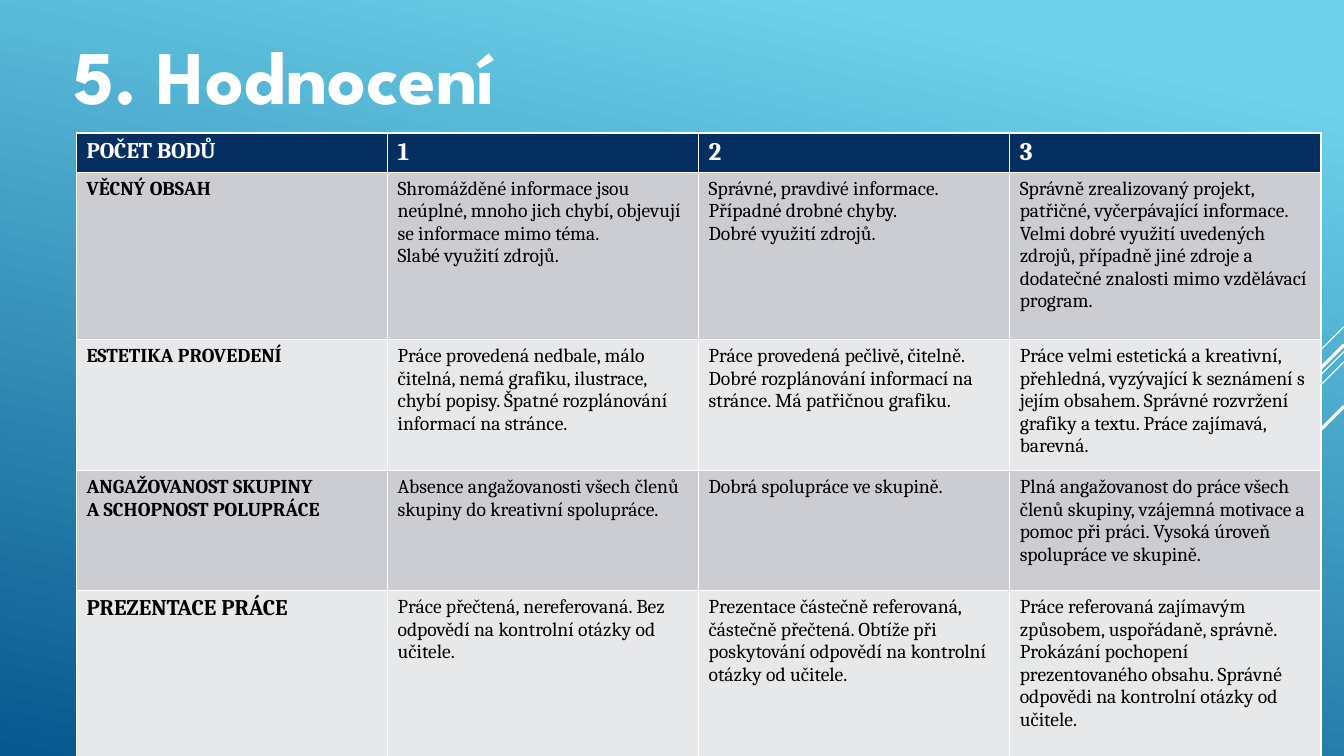
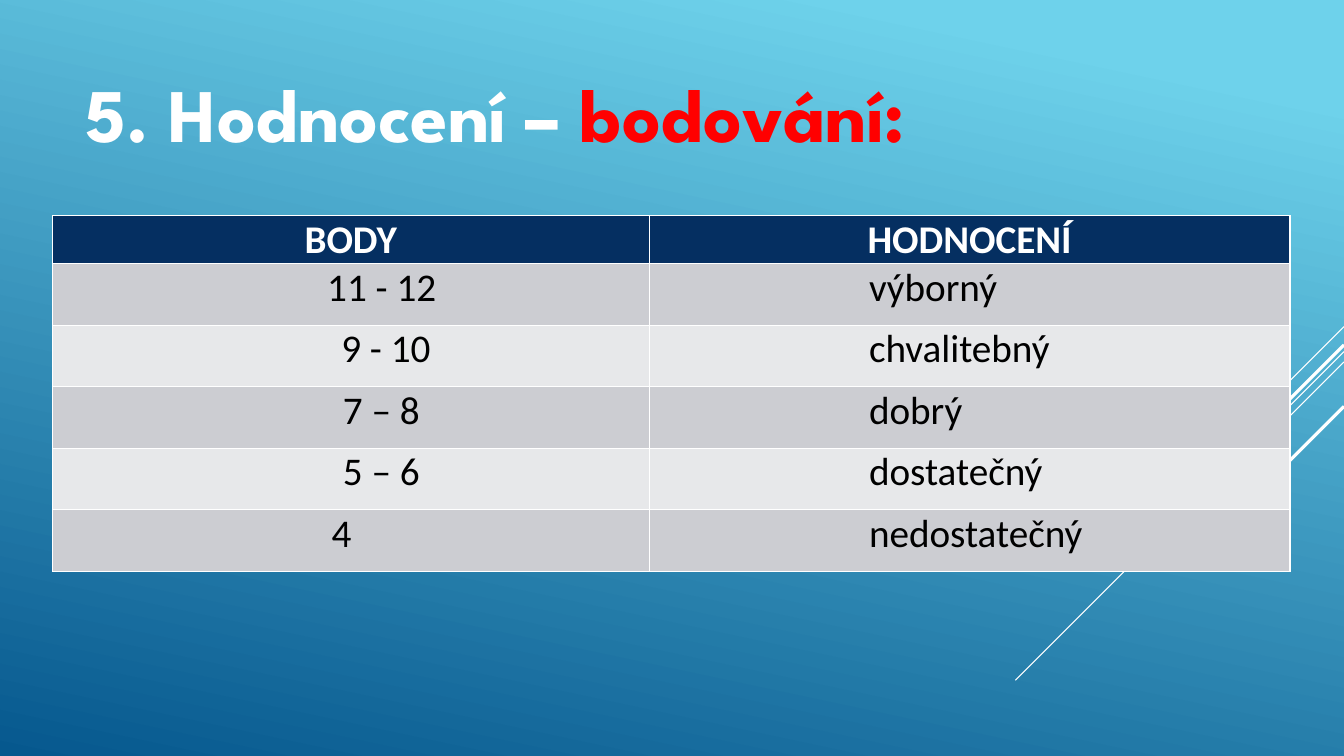
from lxml import etree
from pptx import Presentation
from pptx.dml.color import RGBColor
from pptx.enum import shapes, text
from pptx.oxml import ns
from pptx.util import Cm, Pt

WHITE = RGBColor(0xFF, 0xFF, 0xFF)
BLACK = RGBColor(0x00, 0x00, 0x00)
RED = RGBColor(0xFF, 0x00, 0x00)
NAVY = RGBColor(0x05, 0x2F, 0x61)
BANDS = (RGBColor(0xCC, 0xCD, 0xD2), RGBColor(0xE7, 0xE8, 0xEA))
SKY = ((0.1, RGBColor(0x6E, 0xD2, 0xEB)), (1, RGBColor(0x06, 0x58, 0x8E)))

WIDTH, HEIGHT = 33.87, 19.05
RAYS = [(8.23, 2.54, 0.75), (8.86, 8.28, 0.75), (9.12, 5.27, 0.75),
        (8.69, 4.85, 2.25), (10.24, 3.53, 2.25)]

CRITERIA = [
    ["POČET BODŮ", "1", "2", "3"],
    ["VĚCNÝ OBSAH",
     "Shromážděné informace jsou neúplné, mnoho jich chybí, objevují se "
     "informace mimo téma.\nSlabé využití zdrojů.",
     "Správné, pravdivé informace. Případné drobné chyby.\n"
     "Dobré využití zdrojů.",
     "Správně zrealizovaný projekt, patřičné, vyčerpávající informace. "
     "Velmi dobré využití uvedených zdrojů, případně jiné zdroje a "
     "dodatečné znalosti mimo vzdělávací program."],
    ["ESTETIKA PROVEDENÍ",
     "Práce provedená nedbale, málo čitelná, nemá grafiku, ilustrace, "
     "chybí popisy. Špatné rozplánování informací na stránce.",
     "Práce provedená pečlivě, čitelně. Dobré rozplánování informací na "
     "stránce. Má patřičnou grafiku.",
     "Práce velmi estetická a kreativní, přehledná, vyzývající k seznámení "
     "s jejím obsahem. Správné rozvržení grafiky a textu. Práce zajímavá, "
     "barevná."],
    ["ANGAŽOVANOST SKUPINY\nA SCHOPNOST POLUPRÁCE",
     "Absence angažovanosti všech členů skupiny do kreativní spolupráce.",
     "Dobrá spolupráce ve skupině.",
     "Plná angažovanost do práce všech členů skupiny, vzájemná motivace a "
     "pomoc při práci. Vysoká úroveň spolupráce ve skupině."],
    ["PREZENTACE PRÁCE",
     "Práce přečtená, nereferovaná. Bez odpovědí na kontrolní otázky od "
     "učitele.",
     "Prezentace částečně referovaná, částečně přečtená. Obtíže při "
     "poskytování odpovědí na kontrolní otázky od učitele.",
     "Práce referovaná zajímavým způsobem, uspořádaně, správně. Prokázání "
     "pochopení prezentovaného obsahu. Správné odpovědi na kontrolní otázky "
     "od učitele."],
]
GRADES = [["BODY", "HODNOCENÍ"], ["11 - 12", "výborný"],
          ["9 - 10", "chvalitebný"], ["7 – 8", "dobrý"],
          ["5 – 6", "dostatečný"], ["4", "nedostatečný"]]

INSET = 0.18
SCORE_PADS = [(1.74, INSET), (1.95, INSET), (1.72, INSET), (1.72, INSET),
              (INSET, 0.65)]
GRADE_PAD = 5.54


def apply(item, values):
    for name, value in values.items():
        setattr(item, name, value)


def ink(font, colour, **values):
    apply(font, values)
    font.color.rgb = colour


def add_page(deck):
    page = deck.slides.add_slide(deck.slide_layouts[6])
    fill = page.background.fill
    fill.gradient()
    fill.gradient_angle = 258
    for stop, (place, colour) in zip(fill.gradient_stops, SKY):
        stop.position = place
        stop.color.rgb = colour
    for top, reach, weight in RAYS:
        ray = page.shapes.add_connector(
            shapes.MSO_CONNECTOR.STRAIGHT, Cm(WIDTH), Cm(top),
            Cm(WIDTH - reach), Cm(top + reach))
        ray.line.width = Pt(weight)
        ray.line.color.rgb = WHITE
        etree.SubElement(ray._element.spPr, ns.qn("a:effectLst"))
    return page


def add_title(page, box, *parts):
    frame = page.shapes.add_textbox(*map(Cm, box)).text_frame
    frame.word_wrap = True
    for words, colour in parts:
        run = frame.paragraphs[0].add_run()
        run.text = words
        ink(run.font, colour, name="League Spartan", size=Pt(54), bold=True)


def add_grid(page, rows, spot, widths, heights, look):
    grid = page.shapes.add_table(
        len(rows), len(widths), *map(Cm, (*spot, sum(widths), sum(heights)))
    ).table
    for col, width in zip(grid.columns, widths):
        col.width = Cm(width)
    for row, height in zip(grid.rows, heights):
        row.height = Cm(height)
    for r, row in enumerate(rows):
        for c, words in enumerate(row):
            cell = grid.cell(r, c)
            cell.text = words
            cell.fill.solid()
            cell.fill.fore_color.rgb = BANDS[(r - 1) % 2] if r else NAVY
            font, margins, align = look(r, c)
            apply(cell, {f"margin_{side}": Cm(gap)
                         for side, gap in margins.items()})
            for para in cell.text_frame.paragraphs:
                para.alignment = align
                for run in para.runs:
                    ink(run.font, BLACK if r else WHITE, **font)


def criteria_look(r, c):
    big = {(0, 0): 16, (4, 0): 16}
    size = big.get((r, c), 14 if r else 18)
    font = dict(name="Cambria", size=Pt(size), bold=r == 0 or c == 0)
    pads = dict(left=0.25, right=0.25, top=0.13, bottom=0.13)
    return font, pads, text.PP_ALIGN.LEFT


def grades_look(r, c):
    left = right = INSET
    if r and c:
        left = GRADE_PAD
    elif r:
        left, right = SCORE_PADS[r - 1]
    font = dict(name="Calibri", size=Pt(28), bold=r == 0)
    pads = dict(left=left, right=right, top=0, bottom=0)
    align = text.PP_ALIGN.LEFT if r and c else text.PP_ALIGN.CENTER
    return font, pads, align


def main():
    deck = Presentation()
    apply(deck, dict(slide_width=Cm(WIDTH), slide_height=Cm(HEIGHT)))

    page = add_page(deck)
    add_grid(page, CRITERIA, (1.93, 3.35), [7.84] * 4,
             [0.96, 4.22, 3.3, 3.02, 4.22], criteria_look)
    add_title(page, (1.6, 0.61, 15.24, 4.88), ("5. Hodnocení", WHITE))

    page = add_page(deck)
    add_grid(page, GRADES, (1.32, 5.44), [15.04, 16.15],
             [1.19] + [1.55] * 5, grades_look)
    add_title(page, (1.9, 1.57, 27.51, 2.57),
              ("5. Hodnocení – ", WHITE), ("bodování:", RED))

    deck.save("out.pptx")


if __name__ == "__main__":
    main()
